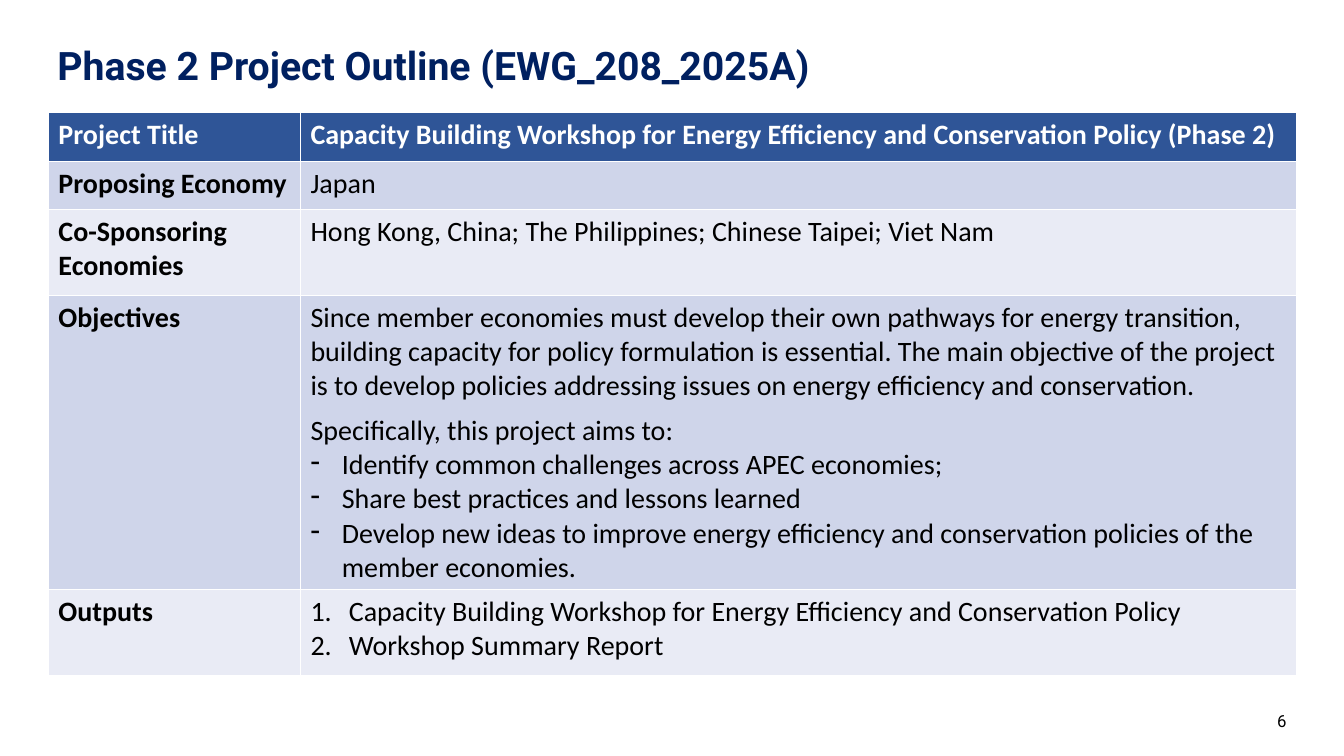
from lxml.etree import SubElement
from pptx import Presentation
from pptx.dml.color import RGBColor
from pptx.enum.text import MSO_ANCHOR, PP_ALIGN
from pptx.oxml.ns import qn
from pptx.util import Inches, Pt

COLORS = {
    "title": "002060",
    "header": "2F5597",
    "band_dark": "CFD5EA",
    "band_light": "E9EBF5",
    "white": "FFFFFF",
    "black": "000000",
}
DASH = ("buChar", "char", "-", 0.31)
NUMBER = ("buAutoNum", "type", "arabicPeriod", 0.38)
COLUMN_WIDTHS = (2.5, 9.88)
OUTLINE = [
    ("Project Title", 0.48, [
        ("Capacity Building Workshop for Energy Efficiency and Conservation Policy (Phase 2)", None, 0),
    ]),
    ("Proposing Economy", 0.48, [("Japan", None, 0)]),
    ("Co-Sponsoring Economies", 0.85, [
        ("Hong Kong, China; The Philippines; Chinese Taipei; Viet Nam", None, 0),
    ]),
    ("Objectives", 2.92, [
        ("Since member economies must develop their own pathways for energy transition, "
         "building capacity for policy formulation is essential. The main objective of the project "
         "is to develop policies addressing issues on energy efficiency and conservation.", None, 0),
        ("Specifically, this project aims to:", None, 7.3),
        ("Identify common challenges across APEC economies;", DASH, 0),
        ("Share best practices and lessons learned", DASH, 0),
        ("Develop new ideas to improve energy efficiency and conservation policies of the "
         "member economies.", DASH, 0),
    ]),
    ("Outputs", 0.85, [
        ("Capacity Building Workshop for Energy Efficiency and Conservation Policy", NUMBER, 0),
        ("Workshop Summary Report", NUMBER, 0),
    ]),
]


def style(paragraph, font_name, size, color, bold=False):
    """Set the font of a whole paragraph."""
    font = paragraph.font
    font.name, font.size, font.bold = font_name, Pt(size), bold
    font.color.rgb = RGBColor.from_string(COLORS[color])


def add_marker(paragraph, marker):
    """Give a paragraph a hanging dash or number."""
    tag, attribute, value, indent = marker
    properties = paragraph._p.get_or_add_pPr()
    properties.set("marL", str(Inches(indent)))
    properties.set("indent", str(-Inches(indent)))
    SubElement(properties, qn("a:" + tag)).set(attribute, value)


def add_line(slide, box, text, anchor, align):
    """Place one line of text in a box and return its paragraph."""
    frame = slide.shapes.add_textbox(*map(Inches, box)).text_frame
    frame.word_wrap = True
    frame.vertical_anchor = anchor
    paragraph = frame.paragraphs[0]
    paragraph.text = text
    paragraph.alignment = align
    return paragraph


def add_title(slide, box):
    """Place the slide title."""
    title = add_line(slide, box, "Phase 2 Project Outline (EWG_208_2025A)",
                     MSO_ANCHOR.BOTTOM, PP_ALIGN.LEFT)
    title.line_spacing = 0.9
    style(title, "Roboto", 28, "title", True)


def add_page_number(slide, box):
    """Place the page number."""
    number = add_line(slide, box, "6", MSO_ANCHOR.MIDDLE, PP_ALIGN.RIGHT)
    style(number, "Roboto", 12, "black")


def fill_cell(cell, entries, fill, color, bold):
    """Fill a table cell with its colour and paragraphs."""
    cell.fill.solid()
    cell.fill.fore_color.rgb = RGBColor.from_string(COLORS[fill])
    frame = cell.text_frame
    for index, (text, marker, gap) in enumerate(entries):
        paragraph = frame.add_paragraph() if index else frame.paragraphs[0]
        paragraph.text = text
        if gap:
            paragraph.space_before = Pt(gap)
        if marker:
            add_marker(paragraph, marker)
        style(paragraph, "Calibri", 20, color, bold)


def add_outline(slide, box):
    """Place the project outline table."""
    outline = slide.shapes.add_table(len(OUTLINE), len(COLUMN_WIDTHS), *map(Inches, box)).table
    for column, width in zip(outline.columns, COLUMN_WIDTHS):
        column.width = Inches(width)
    for index, (label, height, entries) in enumerate(OUTLINE):
        outline.rows[index].height = Inches(height)
        header = index == 0
        band = "band_dark" if index % 2 else "band_light"
        fill, color = ("header", "white") if header else (band, "black")
        fill_cell(outline.cell(index, 0), [(label, None, 0)], fill, color, True)
        fill_cell(outline.cell(index, 1), entries, fill, color, header)


def main():
    """Build and save the slide."""
    deck = Presentation()
    deck.slide_width, deck.slide_height = Inches(13.33), Inches(7.5)
    slide = deck.slides.add_slide(deck.slide_layouts[6])
    add_title(slide, (0.47, 0.34, 12.39, 0.59))
    add_page_number(slide, (9.86, 6.95, 3, 0.4))
    add_outline(slide, (0.48, 1.12, sum(COLUMN_WIDTHS), 5.58))
    deck.save("out.pptx")


if __name__ == "__main__":
    main()
